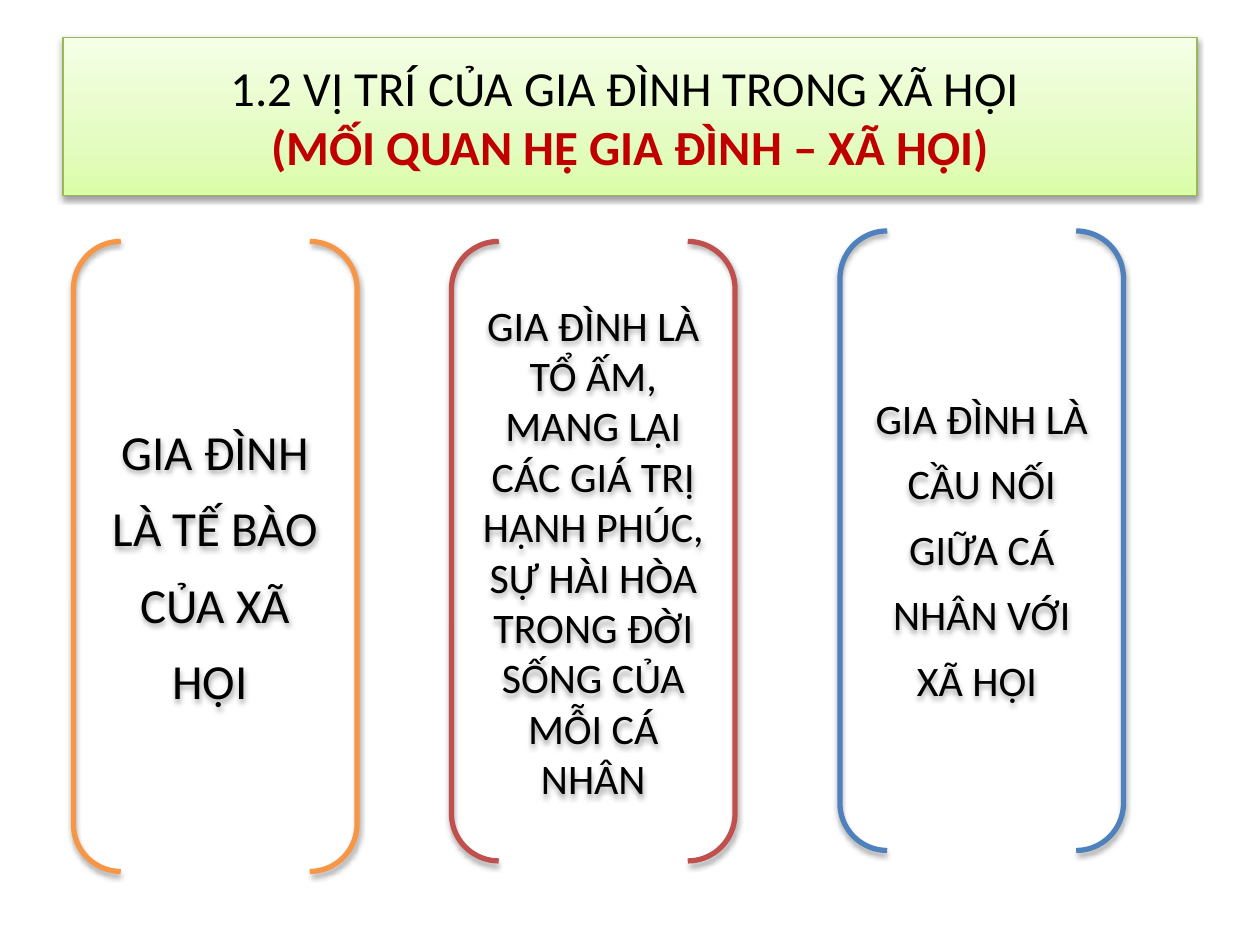
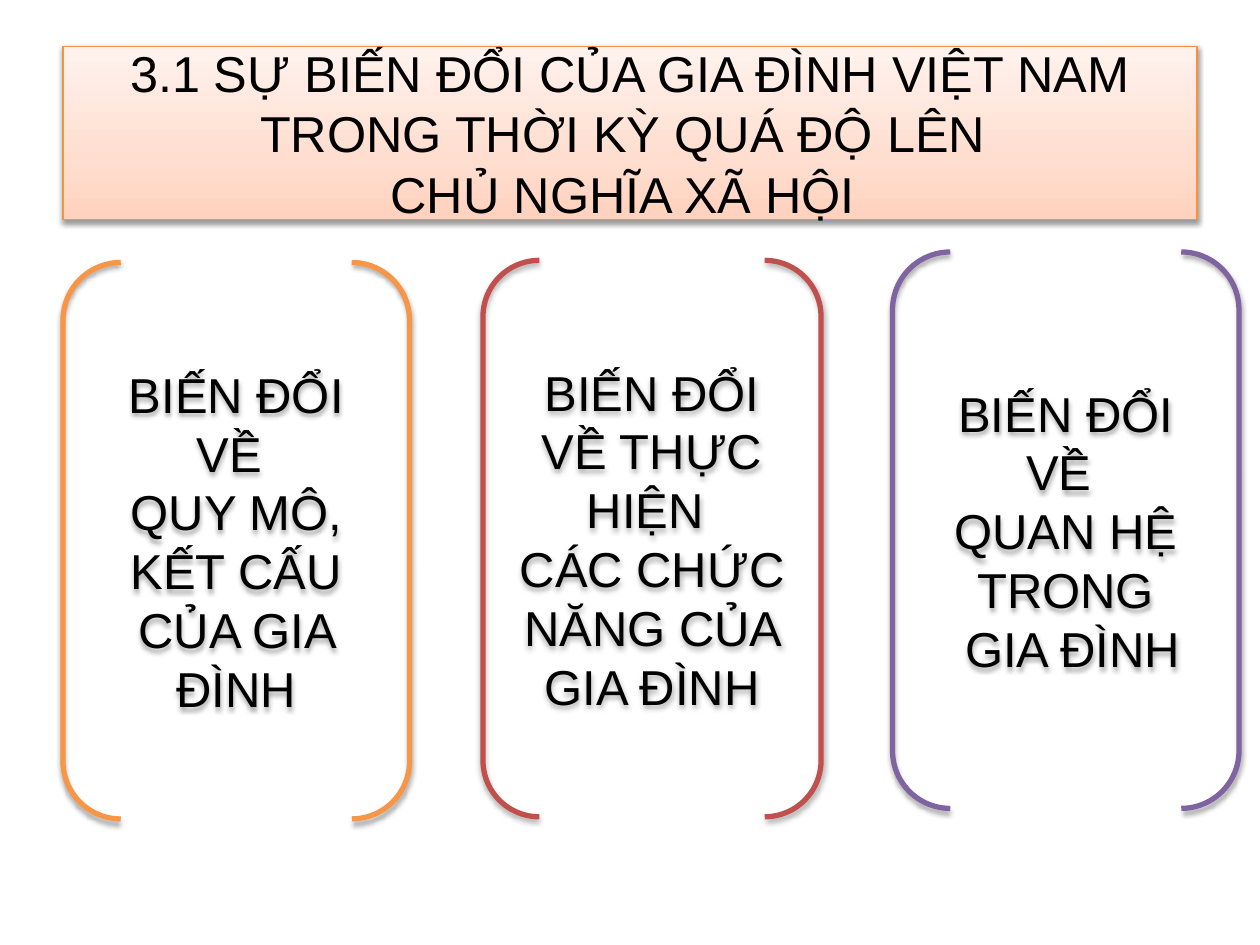
from copy import deepcopy

from lxml.etree import SubElement
from pptx import Presentation
from pptx.dml.color import RGBColor
from pptx.enum.shapes import MSO_SHAPE as Shape
from pptx.enum.text import MSO_ANCHOR as Anchor, MSO_AUTO_SIZE as AutoSize, PP_ALIGN as Align
from pptx.oxml.ns import qn
from pptx.util import Inches, Pt

COLOURS = {
    "text": "000000", "emphasis": "C00000", "shadow": "000000",
    "orange": "F79646", "red": "C0504D", "blue": "4F81BD", "purple": "8064A2",
    "green edge": "98B955", "peach edge": "F69240",
}
BANDS = {
    "green": ("DAFDA7", "E4FCC2", "F5FFE7"),
    "peach": ("FFD2BD", "FFDED0", "FFF2ED"),
}
BAND_STOPS = (0, 0.35, 1)
TITLE_ONLY = 5
COLUMNS, ROWS = 120, 90


def colour(name):
    return RGBColor.from_string(COLOURS[name])


class Deck:
    """Holds the shared style and the slide being filled; boxes are in grid units."""

    def __init__(self):
        self.prs = Presentation()
        self.prs.slide_width, self.prs.slide_height = Inches(10), Inches(7.5)
        self.slide = None
        self.font = None

    def new_slide(self, font):
        self.slide = self.prs.slides.add_slide(self.prs.slide_layouts[TITLE_ONLY])
        self.font = font

    def place(self, shape, box):
        left, top, width, height = box
        column = self.prs.slide_width / COLUMNS
        row = self.prs.slide_height / ROWS
        shape.left, shape.width = round(left * column), round(width * column)
        shape.top, shape.height = round(top * row), round(height * row)

    def outline(self, shape, edge, points):
        shape.line.color.rgb = colour(edge)
        shape.line.width = Pt(points)

    def cast_shadow(self, shape, opacity, distance):
        shape.shadow.inherit = False
        effects = shape._element.spPr.find(qn("a:effectLst"))
        outer = SubElement(effects, qn("a:outerShdw"), blurRad=str(Pt(3.1)),
                           dist=str(Pt(distance)), dir="5400000", rotWithShape="0")
        shade = SubElement(outer, qn("a:srgbClr"), val=COLOURS["shadow"])
        SubElement(shade, qn("a:alpha"), val=str(opacity * 1000))

    def fill_band(self, shape, band):
        shape.fill.gradient()
        shape.fill.gradient_angle = 90
        first = shape._element.spPr.find(".//" + qn("a:gs"))
        first.addnext(deepcopy(first))
        for stop, position, shade in zip(shape.fill.gradient_stops, BAND_STOPS, BANDS[band]):
            stop.position = position
            stop.color.rgb = RGBColor.from_string(shade)

    def set_text(self, shape, text, size, spacing=None):
        frame = shape.text_frame
        frame.text = text
        frame.word_wrap = True
        frame.auto_size = AutoSize.NONE
        frame.vertical_anchor = Anchor.MIDDLE
        for paragraph in frame.paragraphs:
            paragraph.alignment = Align.CENTER
            if spacing:
                paragraph.line_spacing = spacing
            for run in paragraph.runs:
                run.font.name, run.font.size = self.font, Pt(size)
                run.font.color.rgb = colour("text")
            for line_break in paragraph._p.findall(qn("a:br")):
                SubElement(line_break, qn("a:rPr"), sz=str(round(size * 100)))

    def title(self, text, box, band, size, emphasise_last=False):
        heading = self.slide.shapes.title
        self.place(heading, box)
        self.fill_band(heading, band)
        self.outline(heading, band + " edge", 0.75)
        self.cast_shadow(heading, opacity=38, distance=1.6)
        self.set_text(heading, text, size)
        if emphasise_last:
            closing = heading.text_frame.paragraphs[0].runs[-1]
            closing.font.bold = True
            closing.font.color.rgb = colour("emphasis")

    def bracket(self, text, box, edge, size=28, spacing=None):
        bracket = self.slide.shapes.add_shape(Shape.DOUBLE_BRACKET, 0, 0, 0, 0)
        self.place(bracket, box)
        bracket.fill.background()
        self.outline(bracket, edge, 3)
        self.cast_shadow(bracket, opacity=35, distance=1.8)
        self.set_text(bracket, text, size, spacing)


def family_in_society(deck):
    deck.new_slide("Calibri")
    deck.title("1.2 VỊ TRÍ CỦA GIA ĐÌNH TRONG XÃ HỘI \v(MỐI QUAN HỆ GIA ĐÌNH – XÃ HỘI)",
               (6, 3.6, 108, 15), "green", 28, emphasise_last=True)
    deck.bracket("GIA ĐÌNH LÀ TẾ BÀO CỦA XÃ HỘI ", (7, 23, 27, 60), "orange", spacing=1.3)
    deck.bracket("GIA ĐÌNH LÀ TỔ ẤM, MANG LẠI CÁC GIÁ TRỊ HẠNH PHÚC, "
                 "SỰ HÀI HÒA TRONG ĐỜI SỐNG CỦA MỖI CÁ NHÂN",
                 (43, 23, 27, 59), "red", size=24)
    deck.bracket("GIA ĐÌNH LÀ CẦU NỐI GIỮA CÁ NHÂN VỚI XÃ HỘI ",
                 (80, 22, 27, 59), "blue", size=24, spacing=1.3)


def family_changes(deck):
    deck.new_slide("Arial")
    deck.title("3.1 SỰ BIẾN ĐỔI CỦA GIA ĐÌNH VIỆT NAM TRONG THỜI KỲ QUÁ ĐỘ LÊN \v"
               "CHỦ NGHĨA XÃ HỘI ", (6, 4.4, 108, 16.5), "peach", 28.8)
    deck.bracket("BIẾN ĐỔI VỀ \nQUY MÔ, KẾT CẤU CỦA GIA ĐÌNH", (6, 25, 33, 53), "orange")
    deck.bracket("BIẾN ĐỔI VỀ THỰC HIỆN \nCÁC CHỨC NĂNG CỦA GIA ĐÌNH",
                 (46, 24.8, 32.2, 53), "red")
    deck.bracket("BIẾN ĐỔI VỀ \nQUAN HỆ TRONG\n GIA ĐÌNH", (85, 24, 33, 53), "purple")


def main():
    deck = Deck()
    family_in_society(deck)
    family_changes(deck)
    deck.prs.save("out.pptx")


if __name__ == "__main__":
    main()
